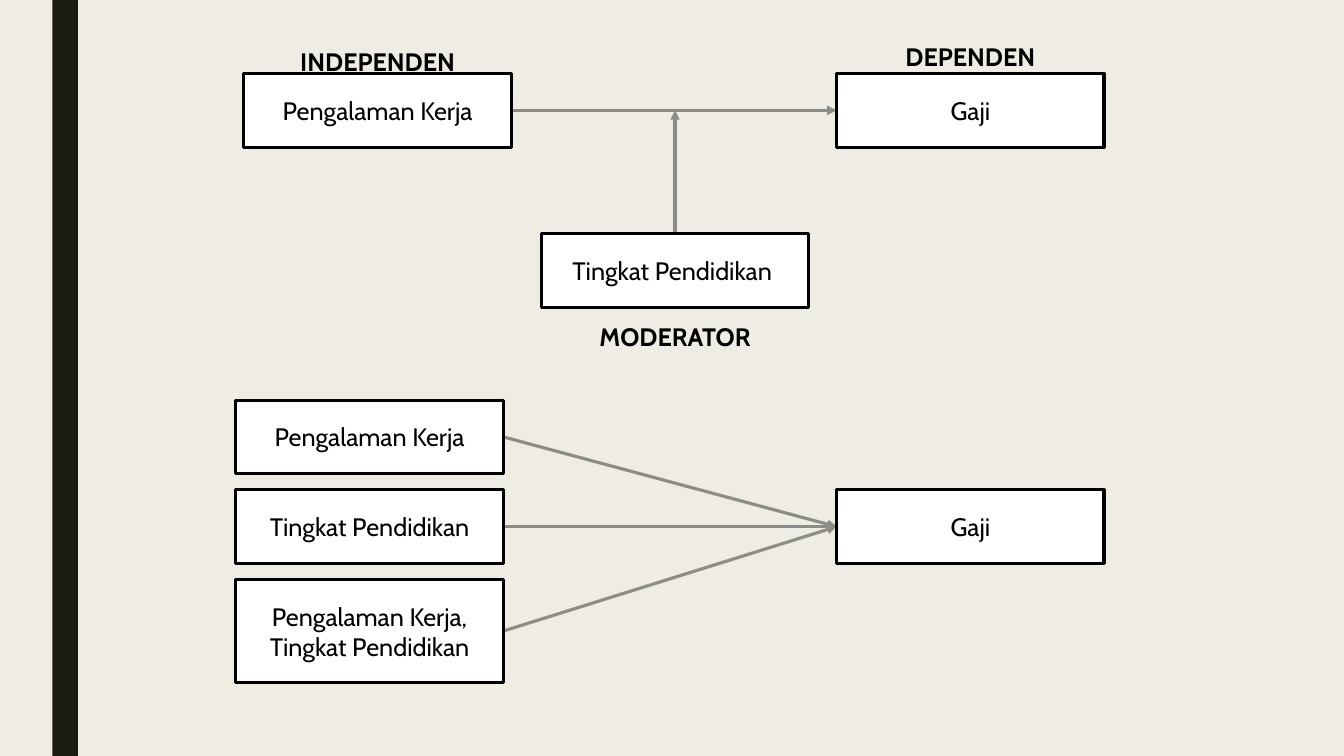
from dataclasses import dataclass

from lxml.etree import SubElement
from pptx import Presentation
from pptx.dml.color import RGBColor
from pptx.enum.shapes import MSO_CONNECTOR, MSO_SHAPE
from pptx.enum.text import MSO_ANCHOR, PP_ALIGN
from pptx.oxml.ns import qn
from pptx.shapes.autoshape import Shape
from pptx.slide import Slide
from pptx.text.text import TextFrame
from pptx.util import Inches, Pt

SLIDE_WIDTH = Inches(13.33)
SLIDE_HEIGHT = Inches(7.5)
BACKGROUND = RGBColor(0xEF, 0xED, 0xE3)
BAR = RGBColor(0x19, 0x1B, 0x0E)
ARROW = RGBColor(0x8C, 0x8D, 0x86)
WHITE = RGBColor(0xFF, 0xFF, 0xFF)
BLACK = RGBColor(0x00, 0x00, 0x00)
FONT_NAME = "Cabin"
LINE_WIDTH = Pt(2.25)

BOX_WIDTH = 19.9
BOX_HEIGHT = 9.73
LABEL_HEIGHT = 3.73
CAUSE_COLUMN = 18.15
MODERATOR_COLUMN = 40.28
EFFECT_COLUMN = 62.25
REGRESSOR_COLUMN = 17.55
MODEL_ROW = 9.73
REGRESSOR_ROW = 52.93
REGRESSOR_STEP = 11.87

Point = tuple[float, float]


@dataclass(frozen=True)
class Box:
    text: str
    left: float
    top: float
    width: float = BOX_WIDTH
    height: float = BOX_HEIGHT

    @property
    def left_middle(self) -> Point:
        return self.left, self.top + self.height / 2

    @property
    def right_middle(self) -> Point:
        return self.left + self.width, self.top + self.height / 2

    @property
    def top_middle(self) -> Point:
        return self.left + self.width / 2, self.top


def across(percent: float) -> int:
    return round(SLIDE_WIDTH * percent / 100)


def down(percent: float) -> int:
    return round(SLIDE_HEIGHT * percent / 100)


def frame(box: Box) -> tuple[int, int, int, int]:
    return across(box.left), down(box.top), across(box.width), down(box.height)


def write_text(text_frame: TextFrame, text: str, *, bold: bool = False,
               anchor: MSO_ANCHOR = MSO_ANCHOR.MIDDLE) -> None:
    text_frame.word_wrap = True
    text_frame.vertical_anchor = anchor
    paragraph = text_frame.paragraphs[0]
    paragraph.alignment = PP_ALIGN.CENTER
    run = paragraph.add_run()
    run.text = text
    run.font.name = FONT_NAME
    run.font.size = Pt(18)
    run.font.bold = bold
    run.font.color.rgb = BLACK


def draw_rectangle(slide: Slide, box: Box, fill: RGBColor) -> Shape:
    shape = slide.shapes.add_shape(MSO_SHAPE.RECTANGLE, *frame(box))
    shape.shadow.inherit = False
    shape.fill.solid()
    shape.fill.fore_color.rgb = fill
    shape.line.fill.background()
    return shape


def draw_box(slide: Slide, box: Box) -> None:
    shape = draw_rectangle(slide, box, WHITE)
    shape.line.color.rgb = BLACK
    shape.line.width = LINE_WIDTH
    write_text(shape.text_frame, box.text)


def draw_label(slide: Slide, label: Box) -> None:
    shape = slide.shapes.add_textbox(*frame(label))
    write_text(shape.text_frame, label.text, bold=True, anchor=MSO_ANCHOR.TOP)


def draw_arrow(slide: Slide, start: Point, end: Point) -> None:
    connector = slide.shapes.add_connector(
        MSO_CONNECTOR.STRAIGHT,
        across(start[0]), down(start[1]), across(end[0]), down(end[1]))
    connector.line.color.rgb = ARROW
    connector.line.width = LINE_WIDTH
    properties = connector._element.spPr
    SubElement(properties.find(qn("a:ln")), qn("a:tailEnd"), type="triangle")
    SubElement(properties, qn("a:effectLst"))


def main() -> None:
    presentation = Presentation()
    presentation.slide_width = SLIDE_WIDTH
    presentation.slide_height = SLIDE_HEIGHT
    slide = presentation.slides.add_slide(presentation.slide_layouts[6])
    slide.background.fill.solid()
    slide.background.fill.fore_color.rgb = BACKGROUND
    draw_rectangle(slide, Box("", 3.9, 0, 1.9, 100), BAR)

    cause = Box("Pengalaman Kerja", CAUSE_COLUMN, MODEL_ROW)
    moderator = Box("Tingkat Pendidikan ", MODERATOR_COLUMN, 30.93)
    effect = Box("Gaji", EFFECT_COLUMN, MODEL_ROW)
    labels = [
        Box("MODERATOR", MODERATOR_COLUMN, 41.87, height=LABEL_HEIGHT),
        Box("INDEPENDEN", CAUSE_COLUMN, 5.47, height=LABEL_HEIGHT),
        Box("DEPENDEN", EFFECT_COLUMN, 4.8, height=LABEL_HEIGHT),
    ]
    regressors = [
        Box(text, REGRESSOR_COLUMN, REGRESSOR_ROW + index * REGRESSOR_STEP, height=height)
        for index, (text, height) in enumerate([
            ("Pengalaman Kerja", BOX_HEIGHT),
            ("Tingkat Pendidikan", BOX_HEIGHT),
            ("Pengalaman Kerja, Tingkat Pendidikan", 13.6),
        ])
    ]
    outcome = Box("Gaji", EFFECT_COLUMN, REGRESSOR_ROW + REGRESSOR_STEP)

    draw_arrow(slide, cause.right_middle, effect.left_middle)
    draw_arrow(slide, moderator.top_middle,
               (moderator.top_middle[0], cause.right_middle[1]))
    for regressor in regressors:
        draw_arrow(slide, regressor.right_middle, outcome.left_middle)
    for box in [cause, moderator, effect, *regressors, outcome]:
        draw_box(slide, box)
    for label in labels:
        draw_label(slide, label)

    presentation.save("out.pptx")


if __name__ == "__main__":
    main()
